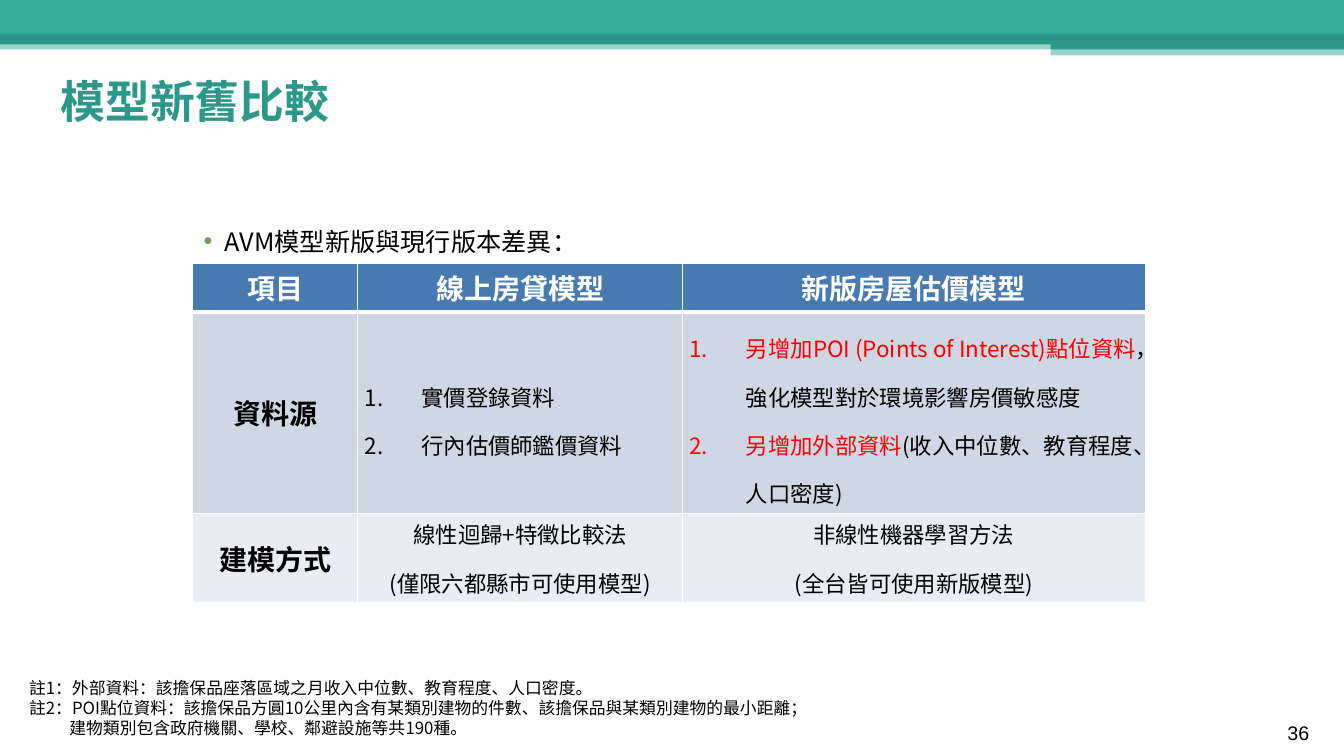
from pptx import Presentation
from pptx.dml.color import RGBColor
from pptx.enum import shapes, text
from pptx.oxml import ns, xmlchemy
from pptx.util import Inches, Pt

COLORS = {
    "teal": "32AB99", "deep": "2C9889", "black": "000000", "white": "FFFFFF",
    "red": "FF0000", "header": "477AB1", "band": "CFD7E4", "pale": "E9ECF2",
    "bullet": "7B9B57",
}
CJK = "Noto Sans CJK SC"
CENTER = text.PP_ALIGN.CENTER
LEFT = text.PP_ALIGN.LEFT

# left, top, width, height, colour, opacity in percent
BARS = [
    (0, 0.4, 13.33, 0.09, "teal", 50),
    (0, 0, 13.33, 0.34, "teal", 100),
    (0, 0.34, 13.33, 0.1, "deep", 100),
    (10.42, 0.39, 2.92, 0.1, "deep", 100),
    (10.42, 0.48, 2.92, 0.07, "teal", 50),
]
# text, left indent
NOTES = [
    ("註1：外部資料：該擔保品座落區域之月收入中位數、教育程度、人口密度。", 0.34),
    ("註2：POI點位資料：該擔保品方圓10公里內含有某類別建物的件數、該擔保品與某類別建物的最小距離；", 0.34),
    ("建物類別包含政府機關、學校、鄰避設施等共190種。", 0.74),
]
HEADINGS = ["項目", "線上房貸模型", "新版房屋估價模型"]
# each paragraph is a list of (text, colour) runs
SOURCES = [
    [[("實價登錄資料", "black")], [("行內估價師鑑價資料", "black")]],
    [[("另增加POI (Points of Interest)點位資料", "red"),
      ("，強化模型對於環境影響房價敏感度", "black")],
     [("另增加外部資料", "red"), ("(收入中位數、教育程度、人口密度)", "black")]],
]
METHODS = [
    ["線性迴歸+特徵比較法", "(僅限六都縣市可使用模型)"],
    ["非線性機器學習方法", "(全台皆可使用新版模型)"],
]


def rgb(name):
    return RGBColor.from_string(COLORS[name])


def add_child(parent, tag, **attributes):
    child = xmlchemy.OxmlElement(tag)
    for key, value in attributes.items():
        child.set(key, str(value))
    parent.append(child)
    return child


def add_run(para, words, size, color="black", bold=False, font=CJK):
    span = para.add_run()
    span.text = words
    span.font.size = Pt(size)
    span.font.bold = bold
    span.font.name = font
    span.font.color.rgb = rgb(color)
    add_child(span.font._element, "a:ea", typeface=CJK)


def next_para(frame, index):
    return frame.paragraphs[0] if index == 0 else frame.add_paragraph()


def set_indent(para, left, first=0):
    props = para._p.get_or_add_pPr()
    props.set("marL", str(Inches(left)))
    props.set("indent", str(Inches(first)))
    return props


def place(box, left, top, width, height):
    box.left, box.top = Inches(left), Inches(top)
    box.width, box.height = Inches(width), Inches(height)


def add_bar(page, left, top, width, height, color, opacity):
    bar = page.shapes.add_shape(
        shapes.MSO_SHAPE.RECTANGLE, Inches(left), Inches(top), Inches(width), Inches(height))
    bar.shadow.inherit = False
    bar.line.fill.background()
    bar.fill.solid()
    bar.fill.fore_color.rgb = rgb(color)
    if opacity < 100:
        shade = bar._element.spPr.find(".//" + ns.qn("a:srgbClr"))
        add_child(shade, "a:alpha", val=opacity * 1000)


def add_text_box(page, left, top, width, height):
    box = page.shapes.add_textbox(Inches(left), Inches(top), Inches(width), Inches(height))
    box.text_frame.word_wrap = True
    return box.text_frame


def fill_title(title):
    place(title, 0.5, 0.68, 9, 0.64)
    title.text_frame.auto_size = text.MSO_AUTO_SIZE.NONE
    title.text_frame.vertical_anchor = text.MSO_ANCHOR.MIDDLE
    para = title.text_frame.paragraphs[0]
    para.alignment = LEFT
    add_run(para, "模型新舊比較", 32, "deep", True, "Lato")


def fill_lead(body):
    place(body, 1.83, 2.04, 8.15, 0.49)
    body.text_frame.auto_size = text.MSO_AUTO_SIZE.NONE
    para = body.text_frame.paragraphs[0]
    props = set_indent(para, 0.3, -0.21)
    add_child(add_child(props, "a:buClr"), "a:srgbClr", val=COLORS["bullet"])
    add_child(props, "a:buChar", char="•")
    para.line_spacing = 1.5
    para.space_before = Pt(0)
    add_run(para, "AVM模型新版與現行版本差異：", 18)


def style_cell(cell, fill, bottom=1):
    cell.vertical_anchor = text.MSO_ANCHOR.MIDDLE
    cell.margin_left = cell.margin_right = Inches(0.07)
    cell.margin_top = cell.margin_bottom = Inches(0.04)
    props = cell._tc.get_or_add_tcPr()
    for side, width in zip("LRTB", (1, 1, 1, bottom)):
        line = add_child(props, "a:ln" + side, w=Pt(width))
        add_child(add_child(line, "a:solidFill"), "a:srgbClr", val=COLORS["white"])
    cell.fill.solid()
    cell.fill.fore_color.rgb = rgb(fill)


def fill_label(cell, words, color="black"):
    para = cell.text_frame.paragraphs[0]
    para.alignment = CENTER
    add_run(para, words, 20, color, True)


def fill_numbered(cell, items):
    for index, runs in enumerate(items):
        para = next_para(cell.text_frame, index)
        add_child(set_indent(para, 0.56, -0.56), "a:buAutoNum", type="arabicPeriod")
        para.line_spacing = 1.5
        for words, color in runs:
            add_run(para, words, 16, color)


def fill_centered(cell, lines):
    for index, words in enumerate(lines):
        para = next_para(cell.text_frame, index)
        para.alignment = CENTER
        if index:
            para.space_before = Pt(12)
        add_run(para, words, 16)


def add_comparison(page):
    table = page.shapes.add_table(
        3, 3, Inches(1.91), Inches(2.61), Inches(9.45), Inches(2.87)).table
    table.first_row = True
    table.horz_banding = False
    for column, width in zip(table.columns, (1.64, 3.22, 4.59)):
        column.width = Inches(width)
    for row, height, fill, bottom in zip(
            table.rows, (0.41, 1.68, 0.78), ("header", "band", "pale"), (3, 1, 1)):
        row.height = Inches(height)
        for cell in row.cells:
            style_cell(cell, fill, bottom)
    for column, heading in enumerate(HEADINGS):
        fill_label(table.cell(0, column), heading, "white")
    fill_label(table.cell(1, 0), "資料源")
    fill_label(table.cell(2, 0), "建模方式")
    for column, (items, lines) in enumerate(zip(SOURCES, METHODS), 1):
        fill_numbered(table.cell(1, column), items)
        fill_centered(table.cell(2, column), lines)


def add_notes(page):
    frame = add_text_box(page, -0.15, 6.67, 9.85, 0.83)
    for index, (words, left) in enumerate(NOTES):
        para = next_para(frame, index)
        set_indent(para, left)
        add_run(para, words, 12)


def main():
    deck = Presentation()
    deck.slide_width, deck.slide_height = Inches(13.33), Inches(7.5)
    page = deck.slides.add_slide(deck.slide_layouts[1])

    # Header bands and title
    for bar in BARS:
        add_bar(page, *bar)
    fill_title(page.shapes.title)

    # Comparison
    fill_lead(page.placeholders[1])
    add_comparison(page)

    # Footnotes and page number
    add_notes(page)
    number = add_text_box(page, 12.67, 7.1, 0.54, 0.3)
    add_run(number.paragraphs[0], "36", 14, font="Arial")

    deck.save("out.pptx")


if __name__ == "__main__":
    main()
